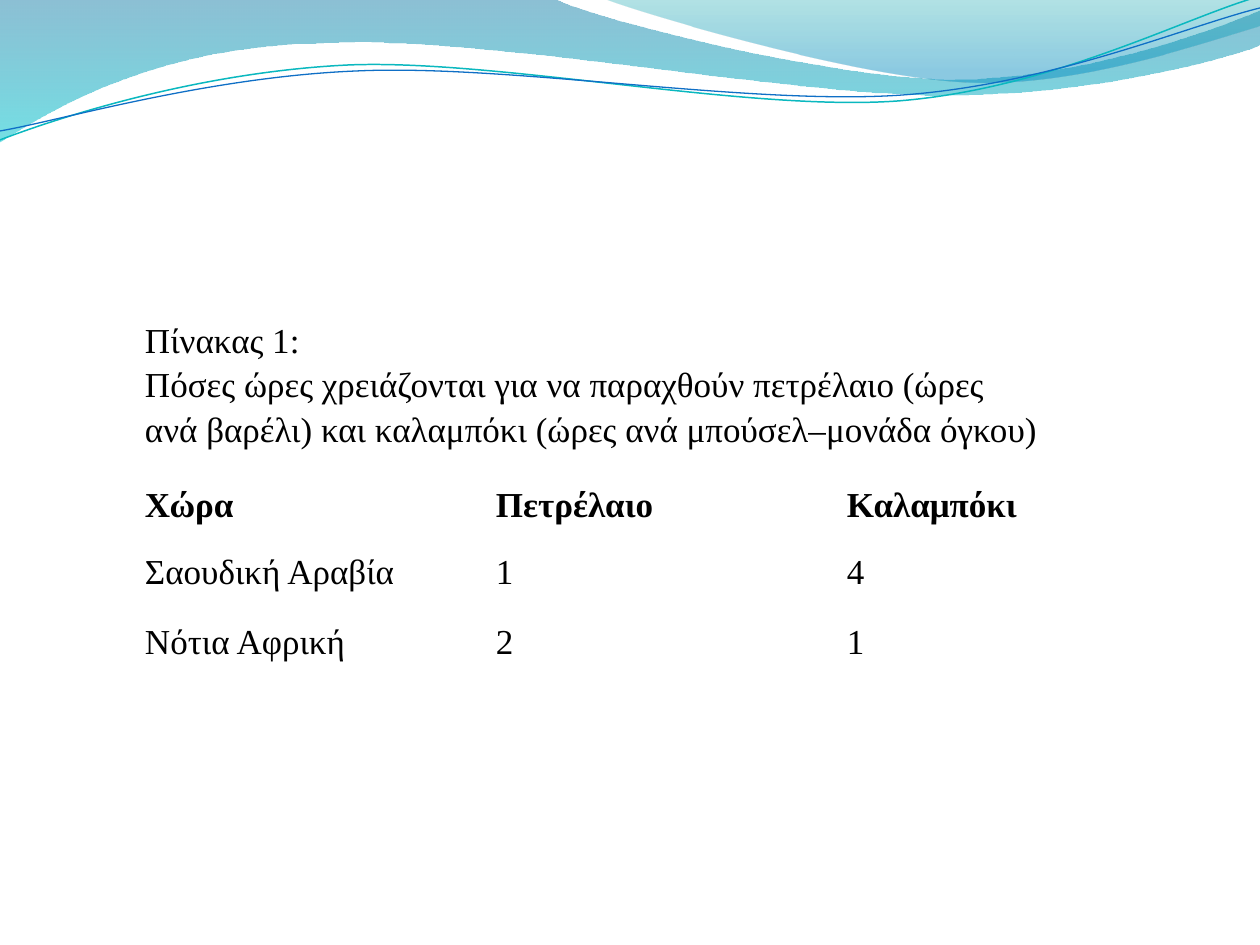
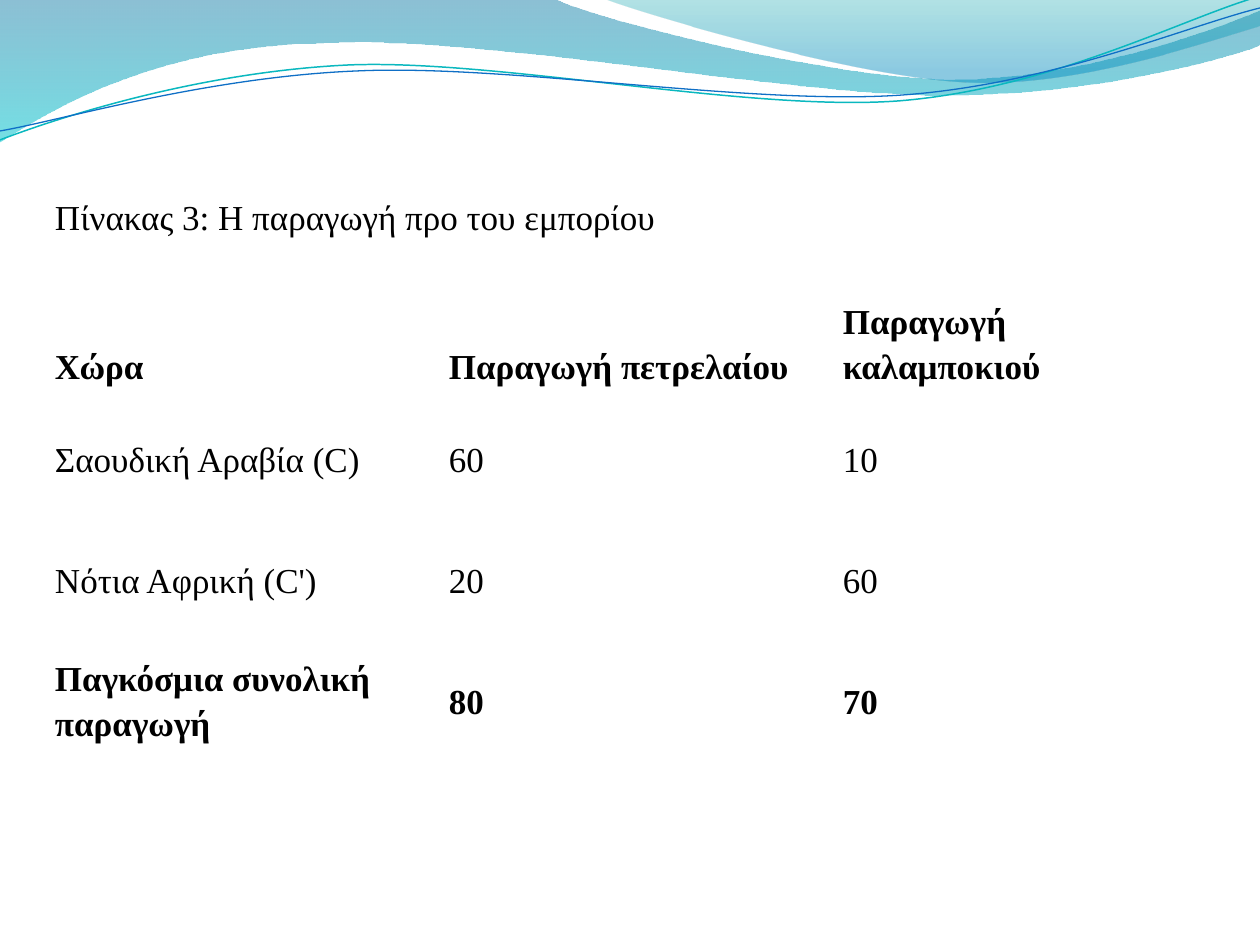
from math import cos, radians, sin

from lxml import etree
from pptx import Presentation
from pptx import util as u
from pptx.dml.color import RGBColor
from pptx.enum import text
from pptx.oxml.ns import qn

BLUE = RGBColor(0x00, 0x74, 0xA1)
AQUA = RGBColor(0x00, 0xC6, 0xCF)
TEAL = RGBColor(0x00, 0xA1, 0xA9)
SKY = RGBColor(0x00, 0x8B, 0xBF)
CYAN = RGBColor(0x0A, 0xB8, 0xBF)
NAVY = RGBColor(0x0F, 0x6F, 0xC6)
BLACK = RGBColor(0, 0, 0)
FONT = "Times New Roman"
TILT = -2.7


def px(n):
    return u.Emu(round(n * 914400 / 126))


def draw(slide, box, start, parts, tilt=0, close=False):
    x, y, w, h = box
    pen = slide.shapes.build_freeform(px(x), px(y))
    pen.add_line_segments([(px(x + w), px(y)), (px(x + w), px(y + h)),
                           (px(x), px(y + h))], close=close)
    wave = pen.convert_to_shape()
    wave.shadow.inherit = False
    wave.rotation = tilt % 360
    trail = wave.element.find(f".//{qn('a:path')}")
    for step in list(trail):
        trail.remove(step)
    co, si = cos(radians(tilt)), sin(radians(tilt))
    for i, part in enumerate([start] + parts):
        kind = "cubicBezTo" if len(part) == 6 else "lnTo" if i else "moveTo"
        step = etree.SubElement(trail, qn(f"a:{kind}"))
        for a, b in zip(part[::2], part[1::2]):
            dx, dy = a - x - w / 2, b - y - h / 2
            dot = etree.SubElement(step, qn("a:pt"))
            dot.set("x", str(px(dx * co + dy * si + w / 2)))
            dot.set("y", str(px(dy * co - dx * si + h / 2)))
    if close:
        etree.SubElement(trail, qn("a:close"))
    return wave


bands = [
    ((-1, -1, 1262, 143), (0, 0),
     [(554, -1), (600, 21, 837, 79, 955, 79),
      (1075, 79, 1207, 33, 1260, 11), (1261, 45),
      (1239, 55, 1096, 96, 940, 95), (784, 95, 481, 35, 324, 43),
      (163, 45, 58, 105, -1, 142), (0, 0)],
     [(0, BLUE, 45), (1, AQUA, 55)]),
    ((604, -1, 656, 88), (604, -1),
     [(641, 14, 859, 78, 969, 82), (1079, 87, 1211, 40, 1260, 26),
      (1260, 0), (604, -1)],
     [(0, TEAL, 30), (0.8, SKY, 45)]),
]
lines = [
    ((-3, 28, 1263, 89), (0, 140),
     [(60, 117, 199, 72, 349, 65), (498, 59, 747, 112, 898, 101),
      (1050, 89, 1182, 19, 1257, -3)], CYAN, 0.85),
    ((-3, 38, 1264, 73), (0, 131),
     [(59, 121, 207, 77, 357, 71), (508, 64, 752, 106, 903, 95),
      (1053, 84, 1187, 26, 1260, 8)], NAVY, 0.75),
]

pages = [
    dict(left=124, top=301, col=351, rows=[164, 70, 70, 70], gap=0, bold=[1],
         head="Πίνακας 1:\n"
              "Πόσες ώρες χρειάζονται για να παραχθούν πετρέλαιο (ώρες\n"
              "ανά βαρέλι) και καλαμπόκι (ώρες ανά μπούσελ–μονάδα όγκου)",
         data=[("Χώρα", "Πετρέλαιο", "Καλαμπόκι"),
               ("Σαουδική Αραβία", "1", "4"),
               ("Νότια Αφρική", "2", "1")]),
    dict(left=34, top=155, col=394, rows=[121] * 5, gap=7.6, bold=[1, 4],
         head="Πίνακας 3: Η παραγωγή προ του εμπορίου",
         data=[("Χώρα", "Παραγωγή πετρελαίου", "Παραγωγή καλαμποκιού"),
               ("Σαουδική Αραβία (C)", "60", "10"),
               ("Νότια Αφρική (C')", "20", "60"),
               ("Παγκόσμια συνολική παραγωγή", "80", "70")]),
]

deck = Presentation()
deck.slide_width, deck.slide_height = px(1260), px(945)

for page in pages:
    slide = deck.slides.add_slide(deck.slide_layouts[6])

    for box, start, parts, stops in bands:
        band = draw(slide, box, start, parts, close=True)
        band.line.fill.background()
        band.fill.gradient()
        band.fill.gradient_angle = 270
        for stop, (place, tint, _) in zip(band.fill.gradient_stops, stops):
            stop.position = place
            stop.color.rgb = tint
        tints = band.element.findall(f".//{qn('a:gs')}/{qn('a:srgbClr')}")
        for node, (_, _, alpha) in zip(tints, stops):
            etree.SubElement(node, qn("a:alpha")).set("val", str(alpha * 1000))

    for box, start, parts, tint, width in lines:
        curve = draw(slide, box, start, parts, TILT)
        curve.fill.background()
        curve.line.color.rgb = tint
        curve.line.width = u.Pt(width)

    rows = page["rows"]
    frame = slide.shapes.add_table(
        len(rows), 3, px(page["left"]), px(page["top"]),
        px(3 * page["col"]), px(sum(rows)))
    table = frame.table
    table.first_row = table.horz_banding = False
    for col in table.columns:
        col.width = px(page["col"])
    for row, high in zip(table.rows, rows):
        row.height = px(high)
    table.cell(0, 0).merge(table.cell(0, 2))

    for r, words in enumerate([(page["head"], "", "")] + page["data"]):
        for c, word in enumerate(words):
            cell = table.cell(r, c)
            cell.fill.background()
            cell.margin_left = cell.margin_right = px(21)
            cell.margin_top = cell.margin_bottom = px(10)
            anchor = text.MSO_ANCHOR
            cell.vertical_anchor = anchor.BOTTOM if r == 1 else anchor.MIDDLE
            if not word:
                continue
            cell.text = word
            for para in cell.text_frame.paragraphs:
                para.line_spacing = 1.15
                para.space_after = u.Pt(page["gap"])
                para.font.name = FONT
                para.font.size = u.Pt(20)
                para.font.bold = r in page["bold"]
                para.font.color.rgb = BLACK

deck.save("out.pptx")
